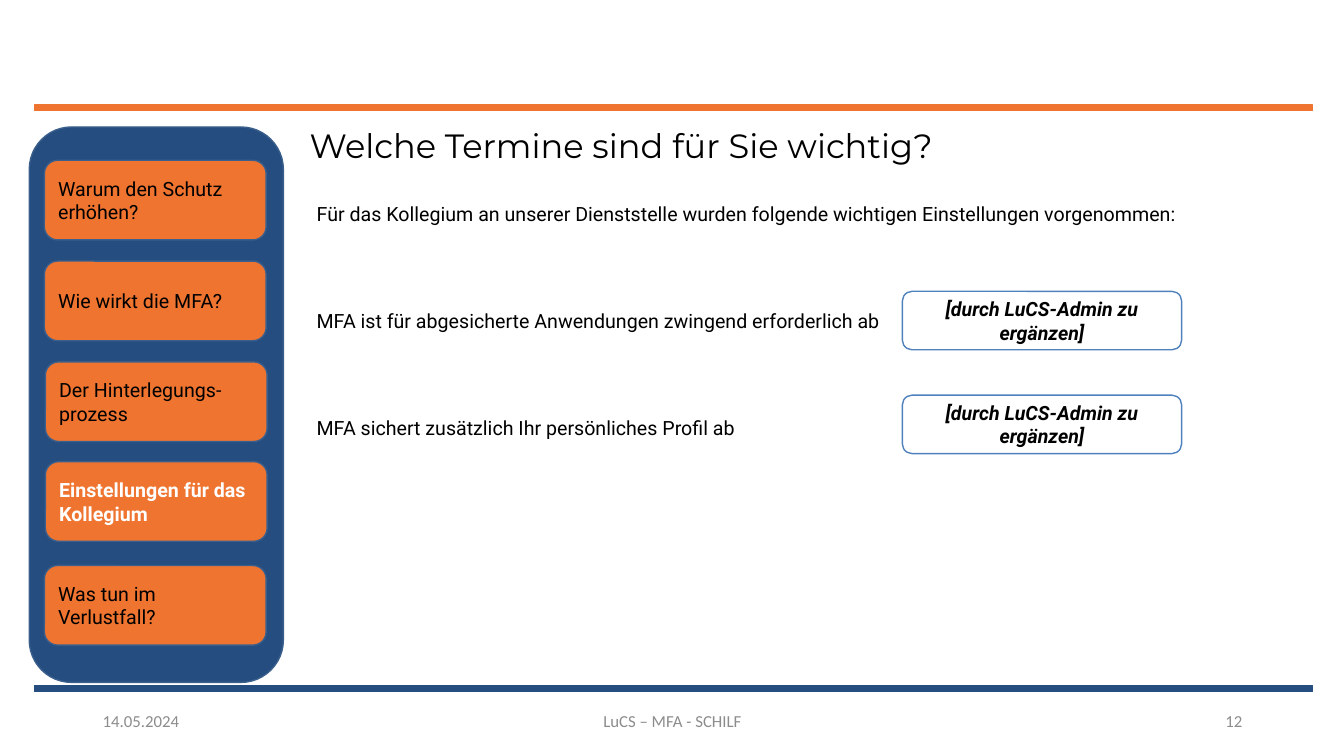
import dataclasses

import pptx
import pptx.dml.color
import pptx.enum.shapes
import pptx.enum.text
import pptx.oxml.ns
import pptx.util

PX = 9144  # EMU per px, 100 px to the inch
COLORS = {
    "orange": "EF7430",
    "navy": "254D7F",
    "edge": "3A5F8C",
    "blue": "4F81BD",
    "black": "000000",
    "white": "FFFFFF",
    "grey": "8C8C8C",
}
ALIGN = pptx.enum.text.PP_ALIGN
ANCHOR = pptx.enum.text.MSO_ANCHOR
SHAPE = pptx.enum.shapes.MSO_SHAPE


@dataclasses.dataclass(frozen=True)
class Box:
    left: int
    top: int
    width: int
    height: int


@dataclasses.dataclass(frozen=True)
class Style:
    size: int = 14
    font: str = "Roboto"
    color: str = "black"
    bold: bool = False
    italic: bool = False
    align: ALIGN = ALIGN.LEFT
    anchor: ANCHOR = ANCHOR.MIDDLE


@dataclasses.dataclass(frozen=True)
class Topic:
    left: int
    top: int
    text: str
    active: bool = False


@dataclasses.dataclass(frozen=True)
class Note:
    box: Box
    text: str
    align: ALIGN


RULES = [(104, "orange"), (680, "navy")]
TOPICS = [
    Topic(44, 159, "Warum den Schutz erhöhen?"),
    Topic(44, 259, "Wie wirkt die MFA?"),
    Topic(45, 359, "Der Hinterlegungs-prozess"),
    Topic(45, 458, "Einstellungen für das Kollegium", True),
    Topic(44, 561, "Was tun im Verlustfall?"),
]
POINTS = [
    "Für das Kollegium an unserer Dienststelle wurden folgende wichtigen Einstellungen vorgenommen:",
    "MFA ist für abgesicherte Anwendungen zwingend erforderlich ab",
    "MFA sichert zusätzlich Ihr persönliches Profil ab",
]
FIELDS = [289, 392]
NOTES = [
    Note(Box(92, 695, 300, 40), "14.05.2024", ALIGN.LEFT),
    Note(Box(442, 695, 450, 40), "LuCS – MFA - SCHILF", ALIGN.CENTER),
    Note(Box(942, 695, 300, 40), "12", ALIGN.RIGHT),
]


def rgb(name: str) -> pptx.dml.color.RGBColor:
    return pptx.dml.color.RGBColor.from_string(COLORS[name])


def place(shape, box: Box) -> None:
    shape.left, shape.top = box.left * PX, box.top * PX
    shape.width, shape.height = box.width * PX, box.height * PX


def write(shape, text: str, style: Style) -> None:
    """Fill the shape with text, one paragraph a line, and format it."""
    frame = shape.text_frame
    frame.text = text
    frame.word_wrap = True
    frame.auto_size = pptx.enum.text.MSO_AUTO_SIZE.NONE
    frame.vertical_anchor = style.anchor
    for para in frame.paragraphs:
        para.alignment = style.align
        for run in para.runs:
            font = run.font
            font.size = pptx.util.Pt(style.size)
            font.name = style.font
            font.bold, font.italic = style.bold, style.italic
            font.color.rgb = rgb(style.color)


def draw(slide, kind: SHAPE, box: Box, fill: str, line: str):
    shape = slide.shapes.add_shape(kind, 0, 0, 0, 0)
    place(shape, box)
    shape.shadow.inherit = False
    shape.fill.solid()
    shape.fill.fore_color.rgb = rgb(fill)
    shape.line.color.rgb = rgb(line)
    shape.line.width = pptx.util.Pt(1)
    return shape


def fill_title(title) -> None:
    place(title, Box(297, 123, 980, 81))
    write(title, "Welche Termine sind für Sie wichtig?",
          Style(24, "Montserrat", anchor=ANCHOR.TOP))
    title.text_frame.paragraphs[0].line_spacing = 0.9


def fill_body(body) -> None:
    place(body, Box(304, 184, 986, 353))
    write(body, "\n".join(POINTS), Style(anchor=ANCHOR.TOP))
    for i, para in enumerate(body.text_frame.paragraphs):
        para.line_spacing = 1.5
        para.space_before = pptx.util.Pt(51 if i else 0)
        props = para._p.get_or_add_pPr()
        props.set("marL", "0")
        props.set("indent", "0")
        props.append(pptx.oxml.parse_xml(
            f"<a:buNone {pptx.oxml.ns.nsdecls('a')}/>"))


def main() -> None:
    deck = pptx.Presentation()
    deck.slide_width, deck.slide_height = 1333 * PX, 750 * PX
    slide = deck.slides.add_slide(deck.slide_layouts[1])

    for top, color in RULES:
        draw(slide, SHAPE.RECTANGLE, Box(34, top, 1268, 6), color, color)
    fill_title(slide.shapes.title)
    fill_body(slide.placeholders[1])

    for note in NOTES:
        label = slide.shapes.add_textbox(0, 0, 0, 0)
        place(label, note.box)
        write(label, note.text,
              Style(12, "Calibri", "grey", align=note.align))

    draw(slide, SHAPE.ROUNDED_RECTANGLE, Box(29, 126, 252, 551), "navy", "edge")
    for topic in TOPICS:
        button = draw(slide, SHAPE.ROUNDED_RECTANGLE,
                      Box(topic.left, topic.top, 220, 79), "orange", "edge")
        color = "white" if topic.active else "black"
        write(button, topic.text, Style(color=color, bold=topic.active))

    for top in FIELDS:
        field = draw(slide, SHAPE.ROUNDED_RECTANGLE,
                     Box(895, top, 277, 58), "white", "blue")
        write(field, "[durch LuCS-Admin zu ergänzen]",
              Style(bold=True, italic=True, align=ALIGN.CENTER))

    deck.save("out.pptx")


if __name__ == "__main__":
    main()
